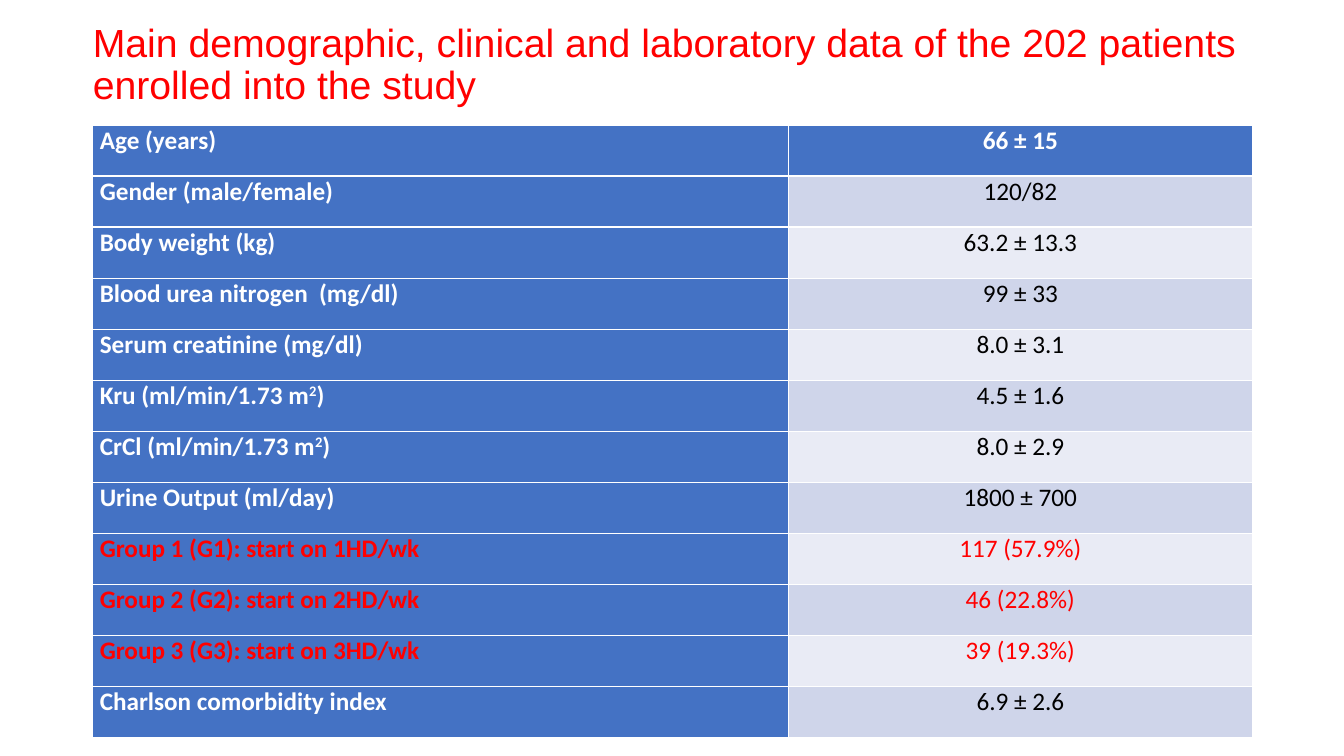
import pptx
from pptx.dml.color import RGBColor
from pptx.enum.text import MSO_ANCHOR, MSO_AUTO_SIZE, PP_ALIGN
from pptx.util import Inches, Pt

RED = RGBColor(0xFF, 0x00, 0x00)
WHITE = RGBColor(0xFF, 0xFF, 0xFF)
BLACK = RGBColor(0x00, 0x00, 0x00)
BLUE = RGBColor(0x44, 0x72, 0xC4)
BANDS = (RGBColor(0xE9, 0xEB, 0xF5), RGBColor(0xCF, 0xD5, 0xEA))

LEFT, WIDTH = Inches(0.92), Inches(11.5)
TITLE = "Main demographic, clinical and laboratory data of the 202 patients enrolled into the study"
# "^" raises the character after it
PATIENT_DATA = [
    ("Age (years)", "66 ± 15"),
    ("Gender (male/female)", "120/82"),
    ("Body weight (kg)", "63.2 ± 13.3"),
    ("Blood urea nitrogen  (mg/dl)", "99 ± 33"),
    ("Serum creatinine (mg/dl)", "8.0 ± 3.1"),
    ("Kru (ml/min/1.73 m^2)", "4.5 ± 1.6"),
    ("CrCl (ml/min/1.73 m^2)", "8.0 ± 2.9"),
    ("Urine Output (ml/day)", "1800 ± 700"),
    ("Group 1 (G1): start on 1HD/wk", "117 (57.9%)"),
    ("Group 2 (G2): start on 2HD/wk", "46 (22.8%)"),
    ("Group 3 (G3): start on 3HD/wk", "39 (19.3%)"),
    ("Charlson comorbidity index", "6.9 ± 2.6"),
]


def style_font(font, name, size, color, bold=False):
    font.name = name
    font.size = Pt(size)
    font.color.rgb = color
    font.bold = bold


def add_title(s):
    title = s.shapes.title
    title.left, title.top, title.width, title.height = LEFT, 0, WIDTH, Inches(1.31)
    tf = title.text_frame
    tf.text = TITLE
    tf.word_wrap = True
    tf.auto_size = MSO_AUTO_SIZE.NONE
    tf.vertical_anchor = MSO_ANCHOR.MIDDLE
    tf.margin_left = tf.margin_top = tf.margin_right = tf.margin_bottom = 0
    p = tf.paragraphs[0]
    p.alignment = PP_ALIGN.LEFT
    p.line_spacing = 0.9
    style_font(p.font, "Arial", 28, RED)


def add_runs(p, text):
    """Add text to p, with the character after "^" as a superscript."""
    base, _, raised = text.partition("^")
    p.add_run().text = base
    if raised:
        r = p.add_run()
        r.text = raised[0]
        r.font._element.set("baseline", "30000")
        p.add_run().text = raised[1:]


def fill_cell(cell, text, fill, color, bold, alignment):
    cell.fill.solid()
    cell.fill.fore_color.rgb = fill
    cell.margin_left = cell.margin_right = Inches(0.07)
    cell.margin_top = cell.margin_bottom = 0
    p = cell.text_frame.paragraphs[0]
    p.alignment = alignment
    p.space_after = Pt(11.2)
    add_runs(p, text)
    style_font(p.font, "Calibri", 18, color, bold)


def add_patient_table(s):
    frame = s.shapes.add_table(len(PATIENT_DATA), 2, LEFT, Inches(1.24), WIDTH, Inches(6.08))
    table = frame.table
    table.first_col = True
    table.columns[0].width = Inches(6.9)
    table.columns[1].width = Inches(4.6)
    for i, (label, value) in enumerate(PATIENT_DATA):
        header = i == 0
        group = label.startswith("Group")
        label_color = RED if group else WHITE
        value_color = WHITE if header else RED if group else BLACK
        value_fill = BLUE if header else BANDS[i % 2]
        fill_cell(table.cell(i, 0), label, BLUE, label_color, True, PP_ALIGN.JUSTIFY)
        fill_cell(table.cell(i, 1), value, value_fill, value_color, header, PP_ALIGN.CENTER)


def main():
    prs = pptx.Presentation()
    prs.slide_width, prs.slide_height = Inches(13.33), Inches(7.5)
    s = prs.slides.add_slide(prs.slide_layouts[5])
    add_title(s)
    add_patient_table(s)
    prs.save("out.pptx")


if __name__ == "__main__":
    main()
